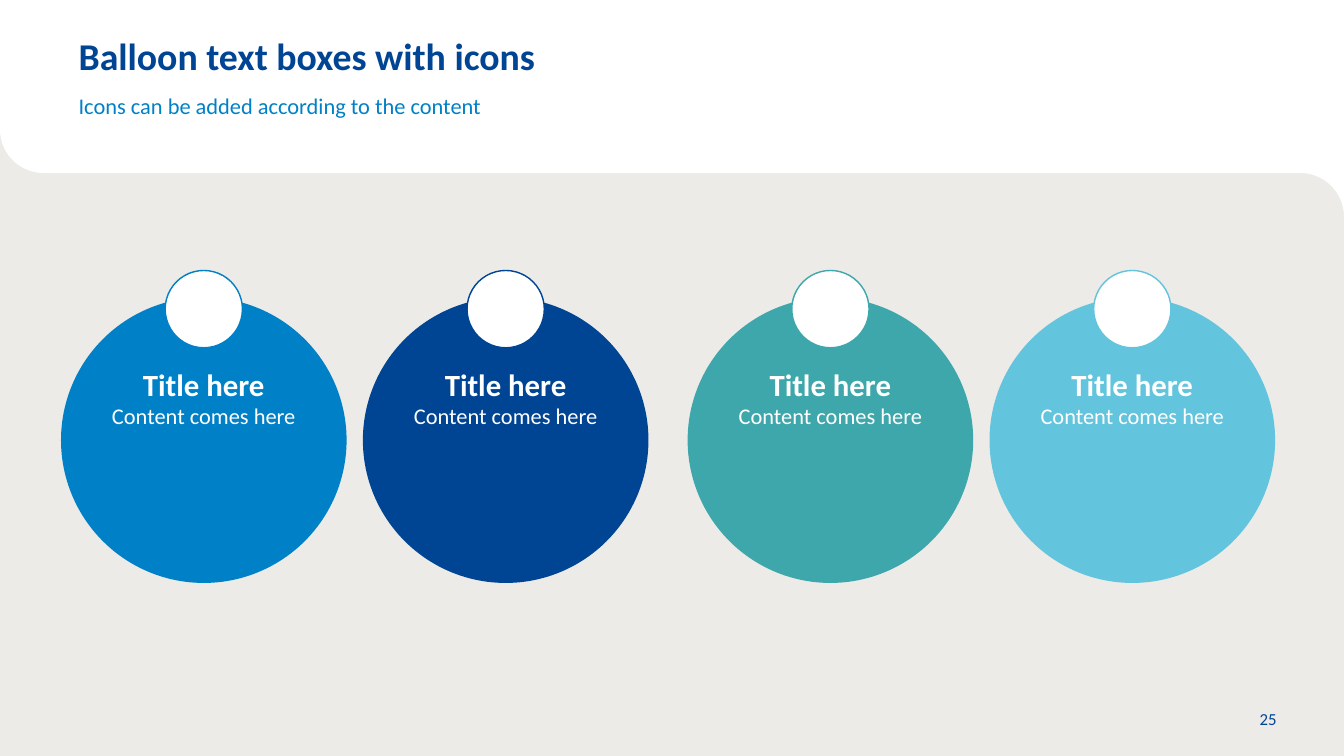
from math import cos, pi, sin

from pptx import Presentation
from pptx.dml.color import RGBColor
from pptx.enum.shapes import MSO_SHAPE
from pptx.enum.text import MSO_ANCHOR, MSO_AUTO_SIZE, PP_ALIGN
from pptx.util import Inches, Pt

COLS, ROWS = 80, 45
NAVY, BLUE, TEAL, SKY = "004494", "0081C7", "3DA7AB", "62C4DD"
WHITE, GREY = "FFFFFF", "ECEBE8"


def paint(fill, color):
    fill.solid()
    fill.fore_color.rgb = RGBColor.from_string(color)


def write(shape, lines, align=PP_ALIGN.LEFT, anchor=MSO_ANCHOR.TOP,
          inset=(0, 0, 0, 0), font="Calibri"):
    """Fill a shape with (text, size, colour, bold) lines; inset in inches."""
    frame = shape.text_frame
    frame.word_wrap = True
    frame.auto_size = MSO_AUTO_SIZE.NONE
    frame.vertical_anchor = anchor
    (frame.margin_left, frame.margin_top,
     frame.margin_right, frame.margin_bottom) = map(Inches, inset)
    for i, (text, size, color, bold) in enumerate(lines):
        para = frame.add_paragraph() if i else frame.paragraphs[0]
        para.alignment = align
        run = para.add_run()
        run.text = text
        run.font.name, run.font.size, run.font.bold = font, Pt(size), bold
        paint(run.font.fill, color)


class Deck:
    """Holds the slide and a grid of square cells that covers it."""

    def __init__(self):
        self.prs = Presentation()
        self.prs.slide_width = Inches(26.67)
        self.prs.slide_height = Inches(15)
        self.slide = self.prs.slides.add_slide(self.prs.slide_layouts[5])
        paint(self.slide.background.fill, GREY)

    def x(self, col):
        return round(self.prs.slide_width * col / COLS)

    def y(self, row):
        return round(self.prs.slide_height * row / ROWS)

    def box(self, col, row, wide, high):
        return self.x(col), self.y(row), self.x(wide), self.y(high)

    def title(self, text, *cell):
        shape = self.slide.shapes.title
        shape.left, shape.top, shape.width, shape.height = self.box(*cell)
        write(shape, [(text, 54, NAVY, True)], inset=(0.35, 0, 0, 0))

    def label(self, text, size, color, *cell, **style):
        shape = self.slide.shapes.add_textbox(*self.box(*cell))
        write(shape, [(text, size, color, False)], **style)

    def header(self, edge, bend, steps=24):
        """White band behind the title; its lower edge bends at both ends."""
        turns = [pi / 2 * i / steps for i in range(steps + 1)]
        right = [(COLS - bend + bend * cos(t), edge + bend - bend * sin(t))
                 for t in turns]
        left = [(bend - bend * sin(t), edge - bend + bend * cos(t))
                for t in turns]
        dots = [(self.x(c), self.y(r)) for c, r in [(COLS, 0), *right, *left]]
        pen = self.slide.shapes.build_freeform(0, 0)
        pen.add_line_segments(dots, close=True)
        band = pen.convert_to_shape()
        band.shadow.inherit = False
        paint(band.fill, WHITE)
        band.line.fill.background()
        self.slide.shapes.title.element.addprevious(band.element)

    def disc(self, col, row, size, color, edge=None):
        shape = self.slide.shapes.add_shape(
            MSO_SHAPE.OVAL, *self.box(col, row, size, size))
        shape.shadow.inherit = False
        paint(shape.fill, color)
        if edge:
            paint(shape.line.fill, edge)
            shape.line.width = Pt(2)
        else:
            shape.line.fill.background()
        return shape

    def balloon(self, col, row, color, size=17, badge=4.6, rise=1.6):
        """Coloured disc with a title and content, and a white icon badge on top."""
        disc = self.disc(col, row, size, color)
        write(disc, [("Title here", 44, WHITE, True),
                     ("Content comes here", 32, WHITE, False)],
              align=PP_ALIGN.CENTER, inset=(0.1, 0.52, 0.1, 0.05))
        self.disc(col + (size - badge) / 2, row - rise, badge, WHITE, color)


def main():
    deck = Deck()
    left, pair, step = 3.63, 37.3, 17.97
    deck.header(10.3, 2.6)
    deck.title("Balloon text boxes with icons", left, 1.92, 66.4, 2.73)
    deck.label("Icons can be added according to the content", 32, BLUE,
               left, 5.49, 66.4, 1.62, inset=(0.35, 0, 0, 0))
    for i, color in enumerate((BLUE, NAVY, TEAL, SKY)):
        deck.balloon(left + i // 2 * pair + i % 2 * step, 17.7, color)
    deck.label("25", 24, NAVY, 73.07, 41.46, 3.21, 2.64,
               align=PP_ALIGN.RIGHT, anchor=MSO_ANCHOR.MIDDLE,
               inset=(0.1, 0.05, 0.1, 0.05))
    deck.prs.save("out.pptx")


if __name__ == "__main__":
    main()
